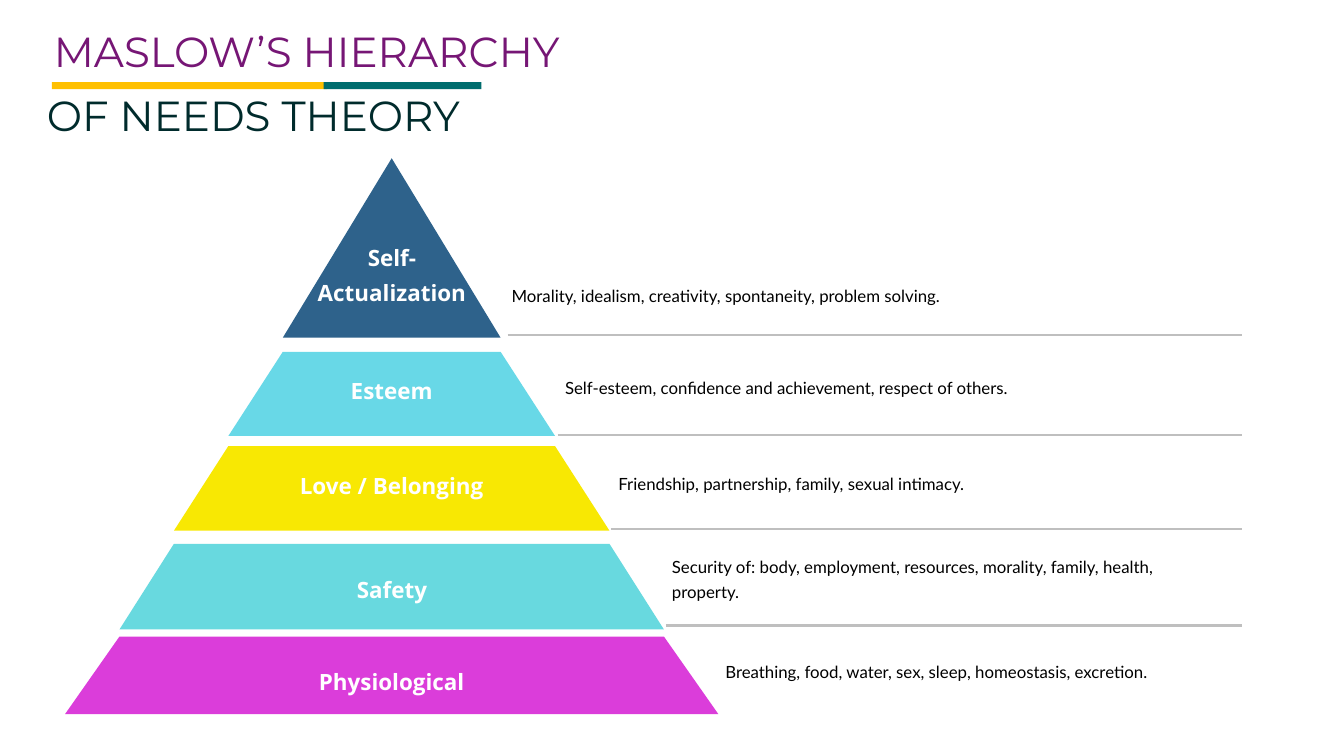
from dataclasses import dataclass

from pptx import Presentation
from pptx import util as u
from pptx.dml.color import RGBColor
from pptx.enum import shapes, text
from pptx.oxml import parse_xml
from pptx.oxml.ns import nsdecls

PX = 9144
WHITE = RGBColor(0xFF, 0xFF, 0xFF)
BLACK = RGBColor(0x00, 0x00, 0x00)
GRAY = RGBColor(0xBF, 0xBF, 0xBF)
PURPLE = RGBColor(0x76, 0x16, 0x75)
DARK_GREEN = RGBColor(0x00, 0x2B, 0x2C)
GOLD = RGBColor(0xFF, 0xC0, 0x00)
TEAL = RGBColor(0x00, 0x6D, 0x6E)
BLUE = RGBColor(0x2E, 0x62, 0x8B)
AQUA = RGBColor(0x68, 0xD8, 0xE7)
YELLOW = RGBColor(0xF8, 0xE8, 0x03)
TURQUOISE = RGBColor(0x68, 0xD9, 0xDF)
MAGENTA = RGBColor(0xDB, 0x3D, 0xDA)
STEP = 108
DESCRIPTION_STEP = 106


@dataclass
class Level:
    """One level of needs, with vertical offsets measured from its band top."""
    top: int
    height: int
    color: RGBColor
    label: str
    label_box: tuple
    description: str
    description_box: tuple
    rule: tuple = ()


LEVELS = [
    Level(314, 356, BLUE, "Self-\nActualization", (154, 317, 144),
          "Morality, idealism, creativity, spontaneity, problem solving.", (242, 54), (1007, 350)),
    Level(698, 167, AQUA, "Esteem", (31, 184, 74),
          "Self-esteem, confidence and achievement, respect of others.", (41, 54), (1106, 166)),
    Level(885, 168, YELLOW, "Love / Belonging", (34, 388, 74),
          "Friendship, partnership, family, sexual intimacy.", (44, 54), (1212, 165)),
    Level(1079, 170, TURQUOISE, "Safety", (45, 161, 74),
          "Security of: body, employment, resources, morality, family, health, property.",
          (15, 103), (1321, 162)),
    Level(1263, 154, MAGENTA, "Physiological", (44, 312, 74),
          "Breathing, food, water, sex, sleep, homeostasis, excretion.", (38, 54)),
]


def px(*lengths):
    """Turn px lengths into EMU."""
    return [u.Emu(length * PX) for length in lengths]


def paint(shape, color):
    """Give a shape a flat fill without line or shadow."""
    shape.shadow.inherit = False
    shape.fill.solid()
    shape.fill.fore_color.rgb = color
    shape.line.fill.background()


def add_text(slide, box, content, font, size, color, wrap=False, bold=False,
             align=text.PP_ALIGN.LEFT, anchor=text.MSO_ANCHOR.TOP, spacing=None):
    """Add a text box with one font throughout."""
    frame = slide.shapes.add_textbox(*px(*box)).text_frame
    frame.text = content
    frame.word_wrap = wrap
    frame.auto_size = text.MSO_AUTO_SIZE.SHAPE_TO_FIT_TEXT
    frame.vertical_anchor = anchor
    for paragraph in frame.paragraphs:
        paragraph.alignment = align
        if spacing:
            paragraph.line_spacing = u.Pt(spacing)
        for run in paragraph.runs:
            run.font.name = font
            run.font.size = u.Pt(size)
            run.font.bold = bold
            run.font.color.rgb = color


def add_title(slide, left, top):
    """Place the two title lines and the two-colour bar between them."""
    add_text(slide, (left + 14, top, 1091, 111), "MASLOW’S HIERARCHY", "Montserrat", 60, PURPLE)
    add_text(slide, (left, top + 126, 875, 111), "OF NEEDS THEORY", "Montserrat", 60, DARK_GREEN)
    for offset, width, color in ((20, 546, GOLD), (559, 313, TEAL)):
        bar = slide.shapes.add_shape(shapes.MSO_SHAPE.RECTANGLE,
                                     *px(left + offset, top + 117, width, 14))
        paint(bar, color)


def add_band(slide, center, index, level):
    """Place one band of the pyramid and its label around the centre line."""
    upper = STEP * (index + 1) if index else 0
    lower = STEP * (index + 2)
    bottom = level.top + level.height
    builder = slide.shapes.build_freeform(center - upper, level.top, scale=PX)
    builder.add_line_segments([(center + upper, level.top), (center + lower, bottom),
                               (center - lower, bottom)], close=True)
    paint(builder.convert_to_shape(), level.color)
    offset, width, height = level.label_box
    anchor = text.MSO_ANCHOR.MIDDLE if index else text.MSO_ANCHOR.BOTTOM
    add_text(slide, (center - width // 2, level.top + offset, width, height), level.label,
             "Open Sans", 32, WHITE, bold=True, align=text.PP_ALIGN.CENTER,
             anchor=anchor, spacing=50)


def add_description(slide, left, right, index, level):
    """Place the description of one level and the rule below it."""
    offset, height = level.description_box
    box = (left + DESCRIPTION_STEP * index, level.top + offset, 993, height)
    add_text(slide, box, level.description, "Lato", 24, BLACK, wrap=True,
             anchor=text.MSO_ANCHOR.MIDDLE, spacing=35)
    if level.rule:
        start, drop = level.rule
        y = level.top + drop
        rule = slide.shapes.add_connector(shapes.MSO_CONNECTOR.STRAIGHT, *px(start, y, right, y))
        rule.line.color.rgb = GRAY
        rule.line.width = u.Pt(3)
        rule._element.spPr.append(parse_xml(f"<a:effectLst {nsdecls('a')}/>"))


def main():
    """Build the slide and save it."""
    presentation = Presentation()
    presentation.slide_width, presentation.slide_height = px(2666, 1500)
    slide = presentation.slides.add_slide(presentation.slide_layouts[6])
    for index, level in enumerate(LEVELS):
        add_band(slide, 777, index, level)
        add_description(slide, 1005, 2464, index, level)
    add_title(slide, 83, 46)
    presentation.save("out.pptx")


if __name__ == "__main__":
    main()
